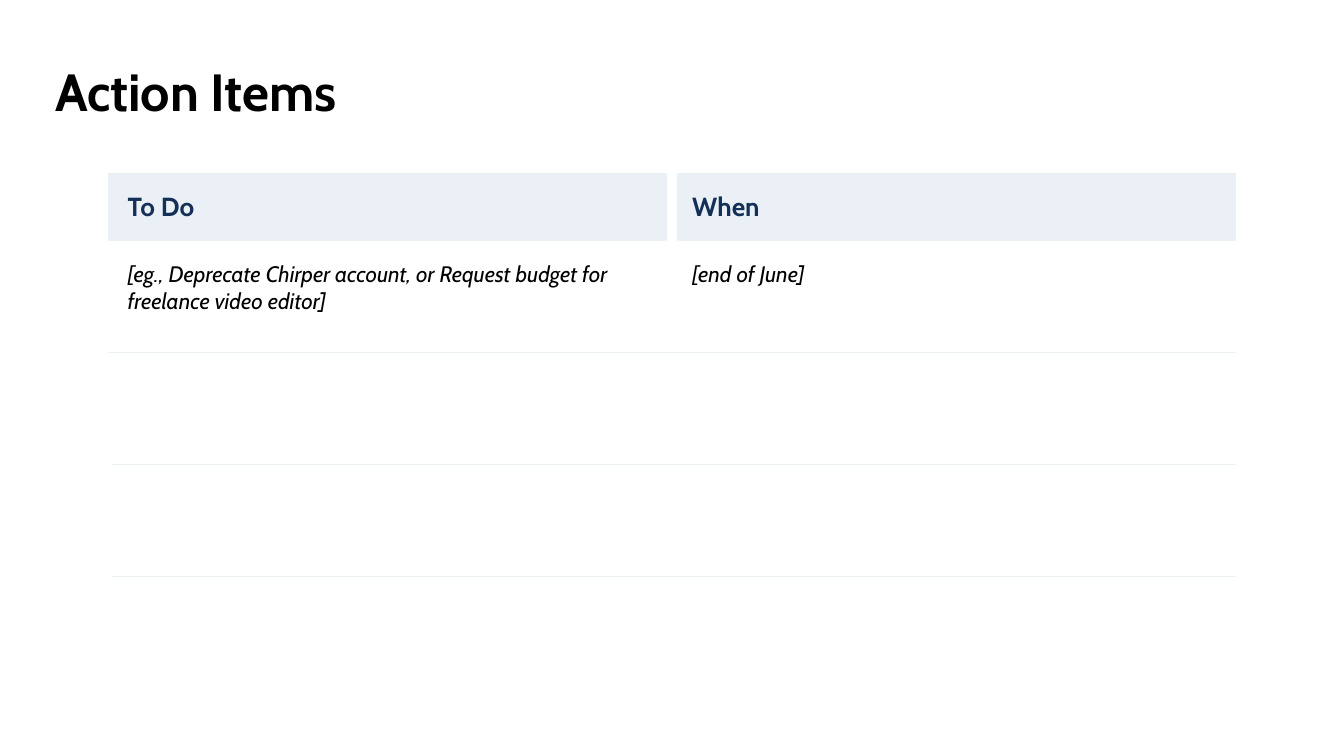
import pptx
import pptx.dml.color
import pptx.enum.text
import pptx.oxml.ns
import pptx.util
from lxml import etree

Inches = pptx.util.Inches
Pt = pptx.util.Pt
ANCHOR = pptx.enum.text.MSO_ANCHOR

TITLE = "Action Items"
ROWS = [
    ("To Do", "When"),
    (
        "[eg., Deprecate Chirper account, or Request budget for freelance video editor]",
        "[end of June]",
    ),
    ("", ""),
    ("", ""),
]
HEADER_HEIGHT, BODY_HEIGHT, COLUMN_WIDTH = 0.5, 2.5, 4.2
FONT = "Cabin"
BLACK, NAVY, PALE, WHITE = "000000", "143059", "EAF0F5", "FFFFFF"
RULE = (PALE, 0.75)
GAP = (WHITE, 6)


def color(value):
    return pptx.dml.color.RGBColor.from_string(value)


def write(frame, text, size, fill=BLACK, bold=False, italic=False, spacing=None):
    frame.word_wrap = True
    paragraph = frame.paragraphs[0]
    paragraph.alignment = pptx.enum.text.PP_ALIGN.LEFT
    paragraph.line_spacing = spacing
    run = paragraph.add_run()
    run.text = text
    run.font.name = FONT
    run.font.size = Pt(size)
    run.font.bold = bold
    run.font.italic = italic
    run.font.color.rgb = color(fill)


def set_borders(cell, borders):
    qn = pptx.oxml.ns.qn
    properties = cell._tc.get_or_add_tcPr()
    for side in "LRTB":
        line = etree.SubElement(properties, qn(f"a:ln{side}"))
        if side in borders:
            value, width = borders[side]
            line.set("w", str(Pt(width)))
            solid = etree.SubElement(line, qn("a:solidFill"))
            etree.SubElement(solid, qn("a:srgbClr"), val=value)
        else:
            etree.SubElement(line, qn("a:noFill"))


def borders_for(row, column):
    borders = {"R" if column == 0 else "L": GAP}
    if row > 0:
        borders["B"] = RULE
    if row > 1:
        borders["T"] = RULE
    if row == len(ROWS) - 1:
        borders["L"] = GAP
    return borders


def add_title(slide):
    title = slide.shapes.title
    title.left, title.top = Inches(0.35), Inches(0.39)
    title.width, title.height = Inches(8.35), Inches(0.59)
    frame = title.text_frame
    frame.auto_size = pptx.enum.text.MSO_AUTO_SIZE.NONE
    frame.vertical_anchor = ANCHOR.TOP
    frame.margin_left = Inches(0.06)
    frame.margin_top = frame.margin_right = frame.margin_bottom = Inches(0.1)
    write(frame, TITLE, 28, bold=True, spacing=0.9)


def add_action_table(slide):
    body_rows = len(ROWS) - 1
    heights = [HEADER_HEIGHT] + [BODY_HEIGHT / body_rows] * body_rows
    columns = len(ROWS[0])
    table = slide.shapes.add_table(
        len(ROWS), columns, Inches(0.8), Inches(1.29),
        Inches(COLUMN_WIDTH * columns), Inches(sum(heights)),
    ).table
    table.first_row = False
    table.horz_banding = False
    for column in table.columns:
        column.width = Inches(COLUMN_WIDTH)
    for row, texts in enumerate(ROWS):
        table.rows[row].height = Inches(heights[row])
        header = row == 0
        for column, text in enumerate(texts):
            cell = table.cell(row, column)
            set_borders(cell, borders_for(row, column))
            cell.margin_left = cell.margin_right = Inches(0.15)
            cell.margin_top = Inches(0.1 if header else 0.15)
            cell.margin_bottom = Inches(0.1)
            cell.vertical_anchor = ANCHOR.MIDDLE if header else ANCHOR.TOP
            if header:
                cell.fill.solid()
                cell.fill.fore_color.rgb = color(PALE)
                write(cell.text_frame, text, 14, fill=NAVY, bold=True)
            else:
                cell.fill.background()
                if text:
                    write(cell.text_frame, text, 12, italic=True)


def main():
    presentation = pptx.Presentation()
    presentation.slide_width = Inches(10)
    presentation.slide_height = presentation.slide_width * 9 // 16
    slide = presentation.slides.add_slide(presentation.slide_layouts[5])
    slide.background.fill.solid()
    slide.background.fill.fore_color.rgb = color(WHITE)
    add_title(slide)
    add_action_table(slide)
    presentation.save("out.pptx")


if __name__ == "__main__":
    main()
